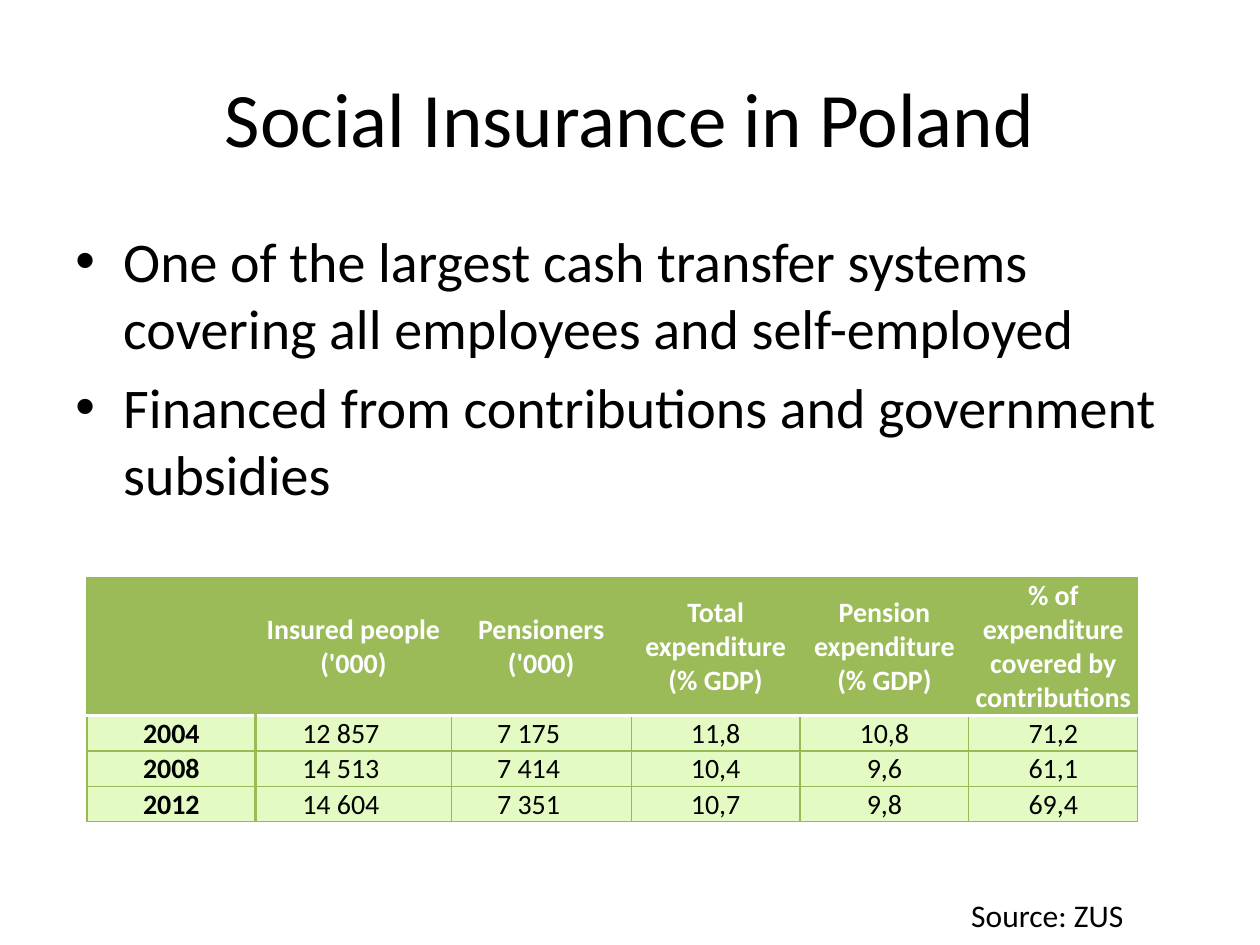
"""Builds a slide on social insurance in Poland with key points and a table."""
from dataclasses import dataclass

from lxml import etree
from pptx import Presentation
from pptx import util as u
from pptx.dml.color import RGBColor
from pptx.enum import text
from pptx.oxml import ns


@dataclass(frozen=True)
class Theme:
    font: str = "Calibri"
    ink: str = "000000"
    header_ink: str = "FFFFFF"
    header_fill: str = "9BBB59"
    body_fill: str = "E3FBC2"
    grid: str = "98B955"
    title_size: int = 44
    bullet_size: int = 32
    source_size: int = 18
    table_size: int = 16


class SlideBuilder:
    def __init__(self, slide, theme):
        self.slide = slide
        self.theme = theme

    def style(self, paragraph, size, color, bold=False):
        font = paragraph.font
        font.name, font.size, font.bold = self.theme.font, u.Pt(size), bold
        font.color.rgb = RGBColor.from_string(color)

    def text_box(self, box, lines, size, align=text.PP_ALIGN.LEFT,
                 anchor=text.MSO_ANCHOR.TOP, wrap=True):
        frame = self.slide.shapes.add_textbox(*map(u.Inches, box)).text_frame
        frame.word_wrap, frame.vertical_anchor = wrap, anchor
        frame.text = "\n".join(lines)
        for paragraph in frame.paragraphs:
            paragraph.alignment = align
            self.style(paragraph, size, self.theme.ink)
        return frame

    def bullets(self, box, points):
        size = self.theme.bullet_size
        for paragraph in self.text_box(box, points, size).paragraphs:
            paragraph.space_before = u.Pt(size * 0.2)
            indent = u.Inches(0.38)
            properties = paragraph._p.get_or_add_pPr()
            properties.set("marL", str(indent))
            properties.set("indent", str(-indent))
            font = etree.SubElement(properties, ns.qn("a:buFont"), typeface="Arial")
            font.addnext(etree.Element(ns.qn("a:buChar"), char="•"))
            properties.append(properties.find(ns.qn("a:defRPr")))

    def border(self, cell, side, color, width):
        line = etree.SubElement(cell._tc.get_or_add_tcPr(), ns.qn(f"a:ln{side}"),
                                w=str(u.Pt(width)))
        fill = etree.SubElement(line, ns.qn("a:solidFill"))
        etree.SubElement(fill, ns.qn("a:srgbClr"), val=color)

    def cell(self, cell, content, row, column):
        theme = self.theme
        header, year = row == 0, column == 0
        borders = dict.fromkeys("LRTB", (theme.grid, 0.75))
        if header:
            borders["B"] = (theme.header_ink, 2)
        elif row == 1:
            borders["T"] = (theme.header_ink, 2)
        if not header and year:
            borders["R"] = (theme.header_fill, 2)
        elif not header and column == 1:
            borders["L"] = (theme.header_fill, 2)
        for side, (color, width) in borders.items():
            self.border(cell, side, color, width)
        cell.fill.solid()
        cell.fill.fore_color.rgb = RGBColor.from_string(
            theme.header_fill if header else theme.body_fill)
        cell.vertical_anchor = text.MSO_ANCHOR.MIDDLE
        cell.margin_left = cell.margin_right = cell.margin_top = u.Inches(0.01)
        cell.margin_bottom = 0
        if not header and column in (1, 2):
            cell.margin_right = u.Inches(0.21)
        cell.text = content
        for paragraph in cell.text_frame.paragraphs:
            paragraph.alignment = text.PP_ALIGN.CENTER
            self.style(paragraph, theme.table_size,
                       theme.header_ink if header else theme.ink, header or year)

    def table(self, left, top, widths, heights, rows):
        box = (left, top, sum(widths), sum(heights))
        table = self.slide.shapes.add_table(
            len(rows), len(widths), *map(u.Inches, box)).table
        for column, width in zip(table.columns, widths):
            column.width = u.Inches(width)
        for row, height in zip(table.rows, heights):
            row.height = u.Inches(height)
        for r, values in enumerate(rows):
            for c, value in enumerate(values):
                self.cell(table.cell(r, c), value, r, c)


def main():
    deck = Presentation()
    deck.slide_width, deck.slide_height = u.Inches(10), u.Inches(7.5)
    theme = Theme()
    builder = SlideBuilder(deck.slides.add_slide(deck.slide_layouts[6]), theme)
    builder.text_box((0.5, 0.3, 9, 1.25), ["Social Insurance in Poland"],
                     theme.title_size, text.PP_ALIGN.CENTER, text.MSO_ANCHOR.MIDDLE)
    builder.bullets((0.5, 1.75, 9, 4.95), [
        "One of the largest cash transfer systems covering all employees and self-employed",
        "Financed from contributions and government subsidies",
    ])
    insurance_figures = [
        ("", "Insured people ('000)", "Pensioners ('000)", "Total expenditure (% GDP)",
         "Pension expenditure\n(% GDP)", "% of expenditure covered by contributions"),
        ("2004", "12 857", "7 175", "11,8", "10,8", "71,2"),
        ("2008", "14 513", "7 414", "10,4", "9,6", "61,1"),
        ("2012", "14 604", "7 351", "10,7", "9,8", "69,4"),
    ]
    builder.table(0.69, 4.58, [1.34, 1.55, 1.43] + [1.34] * 3,
                  [1.1] + [0.28] * 3, insurance_figures)
    builder.text_box((7.61, 7.06, 1.42, 0.4), ["Source: ZUS"],
                     theme.source_size, wrap=False)
    deck.save("out.pptx")


if __name__ == "__main__":
    main()
